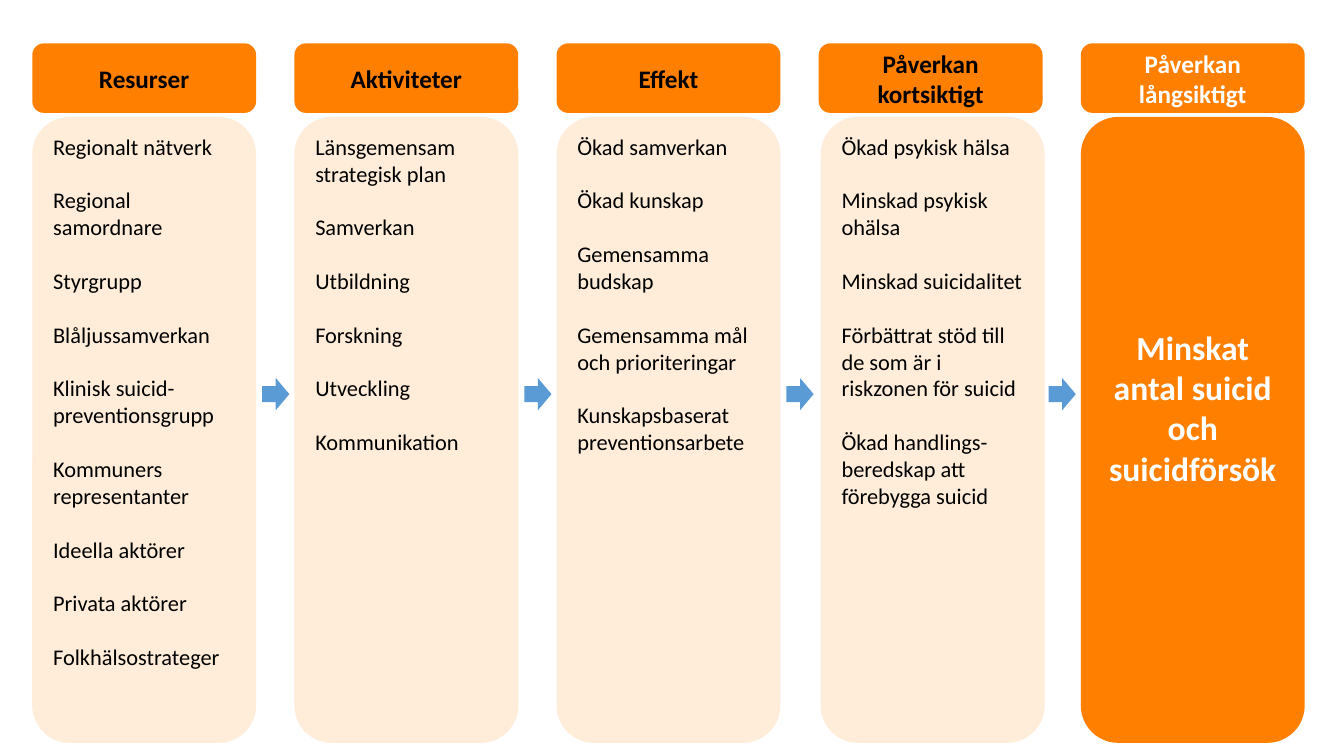
from dataclasses import dataclass

from lxml.etree import SubElement
from pptx import Presentation
from pptx.dml.color import RGBColor
from pptx.enum.shapes import MSO_SHAPE as Shape
from pptx.enum.text import MSO_ANCHOR as Anchor, PP_ALIGN as Align
from pptx.oxml.ns import qn
from pptx.util import Pt

PX = 9144  # EMU per px, 100 px to the inch


@dataclass(frozen=True)
class Theme:
    orange: str = "FF8000"
    blue: str = "5B9BD5"
    dark: str = "000000"
    light: str = "FFFFFF"
    font: str = "Calibri"
    item_size: int = 16
    header_size: int = 18
    goal_size: int = 24
    panel_alpha: int = 15
    item_gap: float = 19.2


@dataclass(frozen=True)
class Column:
    header: str
    items: tuple
    is_goal: bool = False
    panel_shift: int = 0


@dataclass(frozen=True)
class Box:
    left: int
    top: int
    width: int
    height: int


THEME = Theme()
SLIDE_WIDTH, SLIDE_HEIGHT = 1333, 750
FLOW = Box(32, 43, 1262, 694)
COLUMN_WIDTH, COLUMN_STEP = 222, 260
HEADER_HEIGHT, PANEL_OFFSET = 69, 73
ARROW_GAP, ARROW_WIDTH, ARROW_HEIGHT = 6, 27, 32
ARROW_OFFSET = 332
GOAL_BOTTOM_INSET = 50

COLUMNS = (
    Column("Resurser", (
        "Regionalt nätverk", "Regional samordnare", "Styrgrupp",
        "Blåljussamverkan", "Klinisk suicid-preventionsgrupp",
        "Kommuners representanter", "Ideella aktörer", "Privata aktörer",
        "Folkhälsostrateger")),
    Column("Aktiviteter", (
        "Länsgemensam strategisk plan", "Samverkan", "Utbildning",
        "Forskning", "Utveckling", "Kommunikation")),
    Column("Effekt", (
        "Ökad samverkan", "Ökad kunskap", "Gemensamma budskap",
        "Gemensamma mål och prioriteringar",
        "Kunskapsbaserat preventionsarbete")),
    Column("Påverkan kortsiktigt", (
        "Ökad psykisk hälsa", "Minskad psykisk ohälsa",
        "Minskad suicidalitet",
        "Förbättrat stöd till de som är i riskzonen för suicid",
        "Ökad handlings-beredskap att förebygga suicid"), panel_shift=2),
    Column("Påverkan långsiktigt",
           ("Minskat antal suicid och suicidförsök",), is_goal=True),
)


def add_filled(slide, kind, box, color, alpha=100):
    shape = slide.shapes.add_shape(
        kind, box.left * PX, box.top * PX, box.width * PX, box.height * PX)
    shape.shadow.inherit = False
    shape.line.fill.background()
    shape.fill.solid()
    shape.fill.fore_color.rgb = RGBColor.from_string(color)
    if alpha < 100:
        srgb = shape.fill._xPr.find(qn("a:solidFill")).find(qn("a:srgbClr"))
        SubElement(srgb, qn("a:alpha")).set("val", str(alpha * 1000))
    return shape


def write(shape, *texts, size, color=THEME.dark, bold=False,
          align=Align.CENTER, anchor=Anchor.MIDDLE, gap=0):
    """Fill the shape with one paragraph per text, gap points apart."""
    frame = shape.text_frame
    frame.word_wrap = True
    frame.vertical_anchor = anchor
    for index, text in enumerate(texts):
        paragraph = frame.add_paragraph() if index else frame.paragraphs[0]
        paragraph.alignment = align
        paragraph.space_before = Pt(gap if index else 0)
        run = paragraph.add_run()
        run.text = text
        run.font.name = THEME.font
        run.font.size = Pt(size)
        run.font.bold = bold
        run.font.color.rgb = RGBColor.from_string(color)


def add_header(slide, box, column):
    header = add_filled(slide, Shape.FLOWCHART_ALTERNATE_PROCESS, box,
                        THEME.orange)
    write(header, column.header, size=THEME.header_size, bold=True,
          color=THEME.light if column.is_goal else THEME.dark)


def add_item_panel(slide, box, items):
    panel = add_filled(slide, Shape.FLOWCHART_ALTERNATE_PROCESS, box,
                       THEME.orange, THEME.panel_alpha)
    write(panel, *items, size=THEME.item_size, align=Align.LEFT,
          anchor=Anchor.TOP, gap=THEME.item_gap)


def add_goal_panel(slide, box, items):
    panel = add_filled(slide, Shape.FLOWCHART_ALTERNATE_PROCESS, box,
                       THEME.orange)
    panel.text_frame.margin_bottom = GOAL_BOTTOM_INSET * PX
    write(panel, *items, size=THEME.goal_size, color=THEME.light, bold=True)


def add_column(slide, box, column):
    add_header(slide, Box(box.left, box.top, box.width, HEADER_HEIGHT), column)
    panel_box = Box(box.left + column.panel_shift, box.top + PANEL_OFFSET,
                    box.width, box.height - PANEL_OFFSET)
    add_panel = add_goal_panel if column.is_goal else add_item_panel
    add_panel(slide, panel_box, column.items)


def add_flow(slide, box, columns):
    """Place the columns left to right with an arrow in each gap."""
    for index, column in enumerate(columns):
        left = box.left + index * COLUMN_STEP
        add_column(slide, Box(left, box.top, COLUMN_WIDTH, box.height), column)
        if index < len(columns) - 1:
            arrow_box = Box(left + COLUMN_WIDTH + ARROW_GAP,
                            box.top + ARROW_OFFSET, ARROW_WIDTH, ARROW_HEIGHT)
            add_filled(slide, Shape.RIGHT_ARROW, arrow_box, THEME.blue)


def main():
    deck = Presentation()
    deck.slide_width = SLIDE_WIDTH * PX
    deck.slide_height = SLIDE_HEIGHT * PX
    blank_layout = deck.slide_layouts[6]
    add_flow(deck.slides.add_slide(blank_layout), FLOW, COLUMNS)
    deck.save("out.pptx")


if __name__ == "__main__":
    main()
